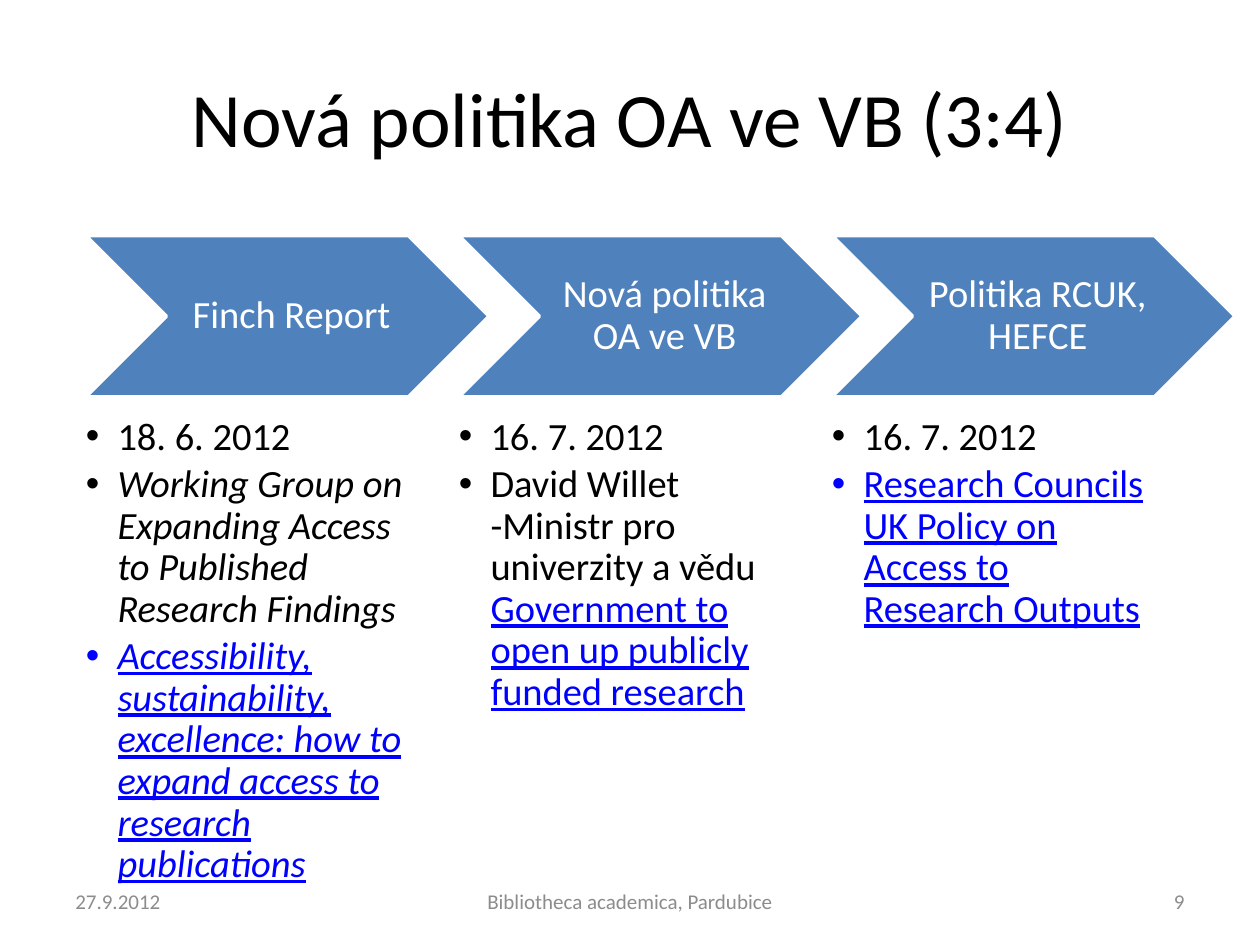
from lxml import etree
from pptx import Presentation
from pptx.dml.color import RGBColor
from pptx.enum.shapes import MSO_SHAPE
from pptx.enum.text import MSO_ANCHOR, PP_ALIGN
from pptx.oxml.ns import qn
from pptx.util import Cm, Pt

CHEVRON = MSO_SHAPE.CHEVRON
MIDDLE, TOP = MSO_ANCHOR.MIDDLE, MSO_ANCHOR.TOP
LEFT, CENTER, RIGHT = PP_ALIGN.LEFT, PP_ALIGN.CENTER, PP_ALIGN.RIGHT
BLACK, WHITE, GRAY, BLUE, LINK = "000000", "FFFFFF", "8C8C8C", "4F81BD", "0000FF"


def add_run(paragraph, text, size, color, italic=False, underline=False):
    run = paragraph.add_run()
    run.text = text
    run.font.name = "Calibri"
    run.font.size = Pt(size)
    run.font.italic = italic
    run.font.underline = underline
    run.font.color.rgb = RGBColor.from_string(color)


def set_frame(frame, anchor, margins):
    frame.word_wrap = True
    frame.vertical_anchor = anchor
    frame.margin_left, frame.margin_top, frame.margin_right, frame.margin_bottom = map(Cm, margins)


prs = Presentation()
prs.slide_width, prs.slide_height = Cm(25.4), Cm(19.05)
slide = prs.slides.add_slide(prs.slide_layouts[5])

title = slide.shapes.title
title.left, title.top, title.width, title.height = Cm(1.27), Cm(0.76), Cm(22.86), Cm(3.18)
set_frame(title.text_frame, MIDDLE, (0.25, 0.13, 0.25, 0.13))
heading = title.text_frame.paragraphs[0]
heading.alignment = CENTER
add_run(heading, "Nová politika OA ve VB (3:4)", 44, BLACK)

stages = [
    ("Finch Report", [
        [("18. 6. 2012", BLACK, False, False)],
        [("Working Group on Expanding Access to Published Research Findings", BLACK, True, False)],
        [("Accessibility, sustainability, excellence: how to expand access to research publications",
          LINK, True, True)],
    ]),
    ("Nová politika OA ve VB", [
        [("16. 7. 2012", BLACK, False, False)],
        [("David Willet -Ministr pro univerzity a vědu ", BLACK, False, False),
         ("Government to open up publicly funded research", LINK, False, True)],
    ]),
    ("Politika RCUK, HEFCE", [
        [("16. 7. 2012", BLACK, False, False)],
        [("Research Councils UK Policy on Access to Research Outputs", LINK, False, True)],
    ]),
]

for column, (stage, points) in enumerate(stages):
    left = Cm(1.73 + 7.52 * column)
    arrow = slide.shapes.add_shape(CHEVRON, left, Cm(4.75), Cm(8.13), Cm(3.25))
    arrow.shadow.inherit = False
    arrow.fill.solid()
    arrow.fill.fore_color.rgb = RGBColor.from_string(BLUE)
    arrow.line.color.rgb = RGBColor.from_string(WHITE)
    arrow.line.width = Pt(2)
    set_frame(arrow.text_frame, MIDDLE, (0.25, 0.08, 0.08, 0.08))
    label = arrow.text_frame.paragraphs[0]
    label.alignment = CENTER
    label.line_spacing = 0.9
    add_run(label, stage, 22, WHITE)

    details = slide.shapes.add_textbox(left, Cm(8.41), Cm(6.5), Cm(9.9)).text_frame
    set_frame(details, TOP, (0, 0, 0, 0))
    for index, runs in enumerate(points):
        point = details.add_paragraph() if index else details.paragraphs[0]
        point.line_spacing = 0.9
        point.space_after = Pt(3.3)
        properties = point._p.get_or_add_pPr()
        properties.set("marL", str(Cm(0.64)))
        properties.set("indent", str(-Cm(0.64)))
        etree.SubElement(properties, qn("a:buFont")).set("typeface", "Arial")
        etree.SubElement(properties, qn("a:buChar")).set("char", "•")
        for text, color, italic, underline in runs:
            add_run(point, text, 22, color, italic, underline)

footers = [
    (1.27, 5.93, LEFT, "27.9.2012"),
    (8.68, 8.04, CENTER, "Bibliotheca academica, Pardubice"),
    (18.2, 5.93, RIGHT, "9"),
]
for left, width, alignment, text in footers:
    footer = slide.shapes.add_textbox(Cm(left), Cm(17.66), Cm(width), Cm(1.01)).text_frame
    set_frame(footer, MIDDLE, (0.25, 0.13, 0.25, 0.13))
    footer.paragraphs[0].alignment = alignment
    add_run(footer.paragraphs[0], text, 12, GRAY)

prs.save("out.pptx")
